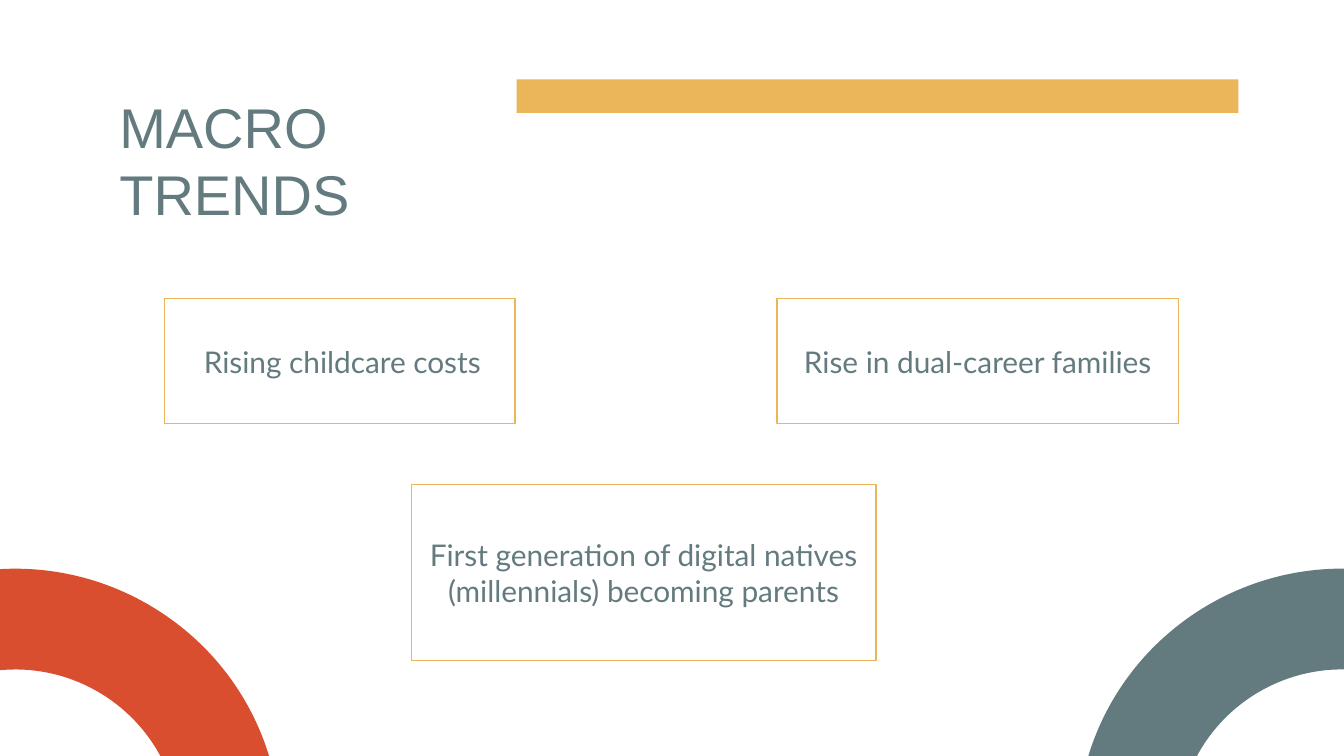
from lxml.etree import SubElement
from pptx import Presentation
from pptx.dml.color import RGBColor
from pptx.enum.shapes import MSO_SHAPE as Shape
from pptx.enum.text import MSO_ANCHOR as Anchor, PP_ALIGN as Align
from pptx.oxml.ns import qn
from pptx.util import Inches, Pt

GOLD, SLATE, RED = "EBB55A", "637B7F", "D84E2E"

# Places are left, top, width, height on a grid of 100 columns, each 0.1 inch.
COLS, ROWS = 100, 56.25
BAR = (38.44, 5.9, 53.7, 2.5)
TITLE = ("MACRO TRENDS", (7.9, 5.9, 32.7, 6.3))
# Text, place of the frame, shift of the text to the right
TRENDS = [
    ("Rising childcare costs", (12.23, 22.22, 26.1, 9.3), 0.2),
    ("Rise in dual-career families", (57.8, 22.22, 29.9, 9.3), 0),
    ("First generation of digital natives (millennials) becoming parents",
     (30.6, 36.07, 34.6, 13.1), 0),
]
# Colour, left edge, side of the ring's centre (0 left, 1 right), tilt
ARCS = [(SLATE, 83, 1, 15), (RED, -1.7, 0, -15)]
ARC_TOP, OUTER, INNER = 40.1, 19.7, 12.2
BEND = 0.55  # handle length of a quarter circle, as a share of its radius


def grid(n):
    return Inches(n / 10)


def color(code):
    return RGBColor.from_string(code)


def paint(shape, fill=None, line=None):
    shape.shadow.inherit = False
    if fill:
        shape.fill.solid()
        shape.fill.fore_color.rgb = color(fill)
    else:
        shape.fill.background()
    if line:
        shape.line.color.rgb = color(line)
        shape.line.width = Pt(0.75)
    else:
        shape.line.fill.background()


def rect(place, **look):
    paint(slide.shapes.add_shape(Shape.RECTANGLE, *map(grid, place)), **look)


def write(text, place, font="Lato", size=16, align=Align.CENTER,
          anchor=Anchor.MIDDLE, lead=None, after=16):
    frame = slide.shapes.add_textbox(*map(grid, place)).text_frame
    frame.word_wrap = True
    frame.vertical_anchor = anchor
    frame.margin_left = frame.margin_right = grid(1)
    frame.margin_top = frame.margin_bottom = grid(1)
    para = frame.paragraphs[0]
    para.alignment = align
    para.space_after = Pt(after)
    if lead:
        para.line_spacing = Pt(lead)
    run = para.add_run()
    run.text = text
    run.font.name, run.font.size = font, Pt(size)
    run.font.color.rgb = color(SLATE)


def bend(line, start, end, hub):
    """Turn a straight segment into a quarter circle around hub."""
    line.tag = qn("a:cubicBezTo")
    first = [s + BEND * (e - h) for s, e, h in zip(start, end, hub)]
    second = [e + BEND * (s - h) for s, e, h in zip(start, end, hub)]
    for child in list(line):
        line.remove(child)
    for x, y in (first, second, end):
        SubElement(line, qn("a:pt"), x=str(round(x)), y=str(round(y)))


def arc(fill, left, side, tilt):
    """Draw a quarter ring around a bottom corner of its square, then tilt it."""
    way = -1 if side else 1
    hub = (side * OUTER, OUTER)
    ends = [(hub[0] + way * OUTER, OUTER), (hub[0], 0),
            (hub[0], OUTER - INNER), (hub[0] + way * INNER, OUTER)]
    hub, *ends = [(grid(x), grid(y)) for x, y in [hub] + ends]
    pen = slide.shapes.build_freeform(*ends[0])
    pen.add_line_segments(ends[1:], close=True)
    ring = pen.convert_to_shape(grid(left), grid(ARC_TOP))
    lines = list(ring.element.iter(qn("a:lnTo")))
    bend(lines[0], ends[0], ends[1], hub)
    bend(lines[2], ends[2], ends[3], hub)
    ring.rotation = tilt
    paint(ring, fill=fill)


deck = Presentation()
deck.slide_width, deck.slide_height = grid(COLS), grid(ROWS)
slide = deck.slides.add_slide(deck.slide_layouts[6])

rect(BAR, fill=GOLD)
for item in ARCS:
    arc(*item)
for _, place, _ in TRENDS:
    rect(place, line=GOLD)

write(*TITLE, font="Arial", size=30, align=Align.LEFT, anchor=Anchor.TOP,
      lead=36, after=0)
for text, (left, *rest), shift in TRENDS:
    write(text, (left + shift, *rest))

deck.save("out.pptx")
